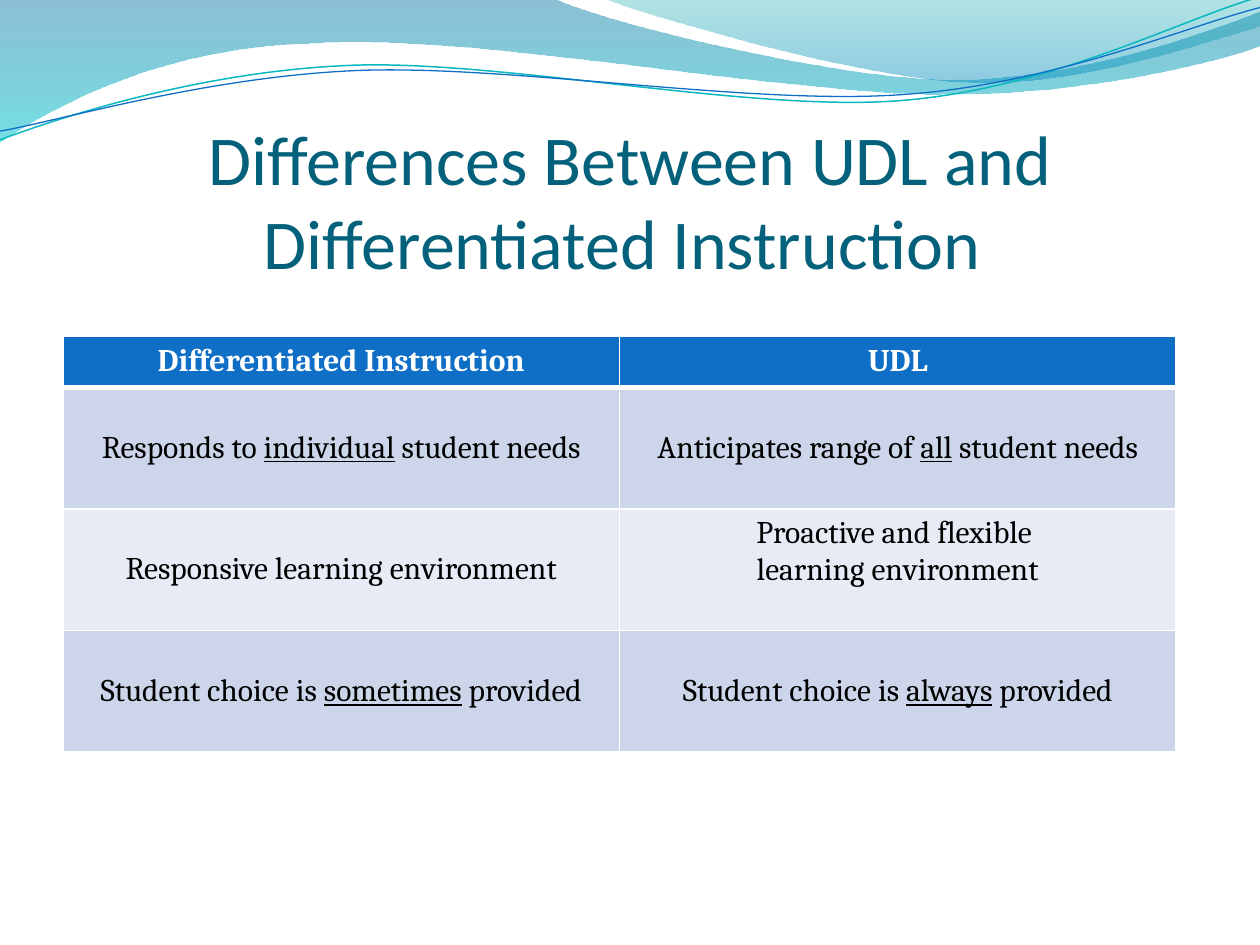
from lxml.etree import SubElement
from pptx import Presentation
from pptx.dml.color import RGBColor
from pptx.enum.text import MSO_ANCHOR as Anchor, PP_ALIGN as Align
from pptx.oxml.ns import qn
from pptx.util import Pt

WHITE = RGBColor(0xFF, 0xFF, 0xFF)
BLACK = RGBColor(0x00, 0x00, 0x00)
TITLE_TEAL = RGBColor(0x04, 0x61, 0x7B)
BLUE = RGBColor(0x0F, 0x6F, 0xC6)
TEAL = RGBColor(0x0A, 0xB8, 0xBF)
DEEP_BLUE = RGBColor(0x00, 0x74, 0xA1)
AQUA = RGBColor(0x00, 0xC6, 0xCF)
SEA_GREEN = RGBColor(0x00, 0xA1, 0xA9)
SKY_BLUE = RGBColor(0x00, 0x8B, 0xBF)
BAND_DARK = RGBColor(0xCC, 0xD5, 0xEA)
BAND_LIGHT = RGBColor(0xE7, 0xEB, 0xF5)

prs = Presentation()
prs.slide_width, prs.slide_height = Pt(720), Pt(540)
slide = prs.slides.add_slide(prs.slide_layouts[6])


def add_wave(start, segments, close):
    """Draw an outline in points; a segment is a line end or a cubic Bezier's three points."""
    builder = slide.shapes.build_freeform(Pt(start[0]), Pt(start[1]))
    builder.add_line_segments([(Pt(x), Pt(y)) for segment in segments for x, y in segment],
                              close=close)
    wave = builder.convert_to_shape()
    wave.shadow.inherit = False
    # Join each run of three line ends into one Bezier command
    line_ends = iter(list(wave.element.spPr.iter(qn("a:lnTo"))))
    for segment in segments:
        first = next(line_ends)
        if len(segment) == 3:
            bezier = SubElement(first.getparent(), qn("a:cubicBezTo"))
            first.addprevious(bezier)
            for line_end in (first, next(line_ends), next(line_ends)):
                bezier.append(line_end[0])
                line_end.getparent().remove(line_end)
    return wave


# Translucent waves: start, segments, (colour, opacity %) from top to bottom
gradient_waves = [
    ((0, 0),
     [[(316.8, -0.7)],
      [(342.7, 12.2), (478.1, 45.4), (545.8, 45.4)],
      [(614.2, 45.4), (689.8, 18.7), (720, 6.5)],
      [(720.7, 25.9)],
      [(707.8, 31.7), (626.4, 54.7), (537.1, 54)],
      [(447.8, 54), (275, 20.2), (185, 24.5)],
      [(92.9, 25.9), (33.1, 59.8), (-0.7, 81.4)]],
     [(DEEP_BLUE, 45), (AQUA, 55)]),
    ((344.9, -0.7),
     [[(366.5, 7.9), (491, 44.6), (553.7, 46.8)],
      [(616.3, 49.7), (691.9, 23), (720, 15.1)],
      [(720, 0)]],
     [(SEA_GREEN, 30), (SKY_BLUE, 45)]),
]
for start, segments, shades in gradient_waves:
    wave = add_wave(start, segments, close=True)
    wave.line.fill.background()
    wave.fill.gradient()
    wave.fill.gradient_angle = 270
    for stop, (color, _) in zip(wave.fill.gradient_stops, shades):
        stop.color.rgb = color
    for node, (_, opacity) in zip(wave.element.spPr.iter(qn("a:srgbClr")), shades):
        SubElement(node, qn("a:alpha"), val=str(opacity * 1000))

# Thin curves: start, segments, colour, width
thin_curves = [
    ((0, 79.9),
     [[(34.6, 67), (113.8, 41), (199.4, 37.4)],
      [(284.4, 33.8), (427, 64.1), (513.4, 57.6)],
      [(599.8, 51.1), (675.4, 10.8), (718.6, -1.4)]],
     TEAL, 0.85),
    ((0, 74.9),
     [[(33.8, 69.1), (118.1, 43.9), (203.8, 40.3)],
      [(290.2, 36.7), (429.8, 60.5), (516.2, 54)],
      [(601.9, 48.2), (677.5, 15.1), (720, 4.3)]],
     BLUE, 0.75),
]
for start, segments, color, width in thin_curves:
    curve = add_wave(start, segments, close=False)
    curve.fill.background()
    curve.line.color.rgb = color
    curve.line.width = Pt(width)

# Title
title = slide.shapes.add_textbox(Pt(36), Pt(72), Pt(648), Pt(90)).text_frame
title.word_wrap = True
title.vertical_anchor = Anchor.BOTTOM
title.margin_left = title.margin_right = title.margin_bottom = 0
title.text = "Differences Between UDL and Differentiated Instruction "
title.paragraphs[0].alignment = Align.CENTER
title_font = title.paragraphs[0].runs[0].font
title_font.name, title_font.size = "Calibri", Pt(40)
title_font.color.rgb = TITLE_TEAL

# Comparison table; words between asterisks are underlined
comparison = [
    ("Differentiated Instruction", "UDL"),
    ("Responds to *individual* student needs", "Anticipates range of *all* student needs"),
    ("Responsive learning environment", "Proactive and flexible \nlearning environment"),
    ("Student choice is *sometimes* provided", "Student choice is *always* provided"),
]
HEADER_HEIGHT, ROW_HEIGHT = 29.2, 69.5
table = slide.shapes.add_table(
    len(comparison), 2, Pt(36), Pt(192.2), Pt(636), Pt(HEADER_HEIGHT + 3 * ROW_HEIGHT)).table
for r, entries in enumerate(comparison):
    is_header = r == 0
    table.rows[r].height = Pt(HEADER_HEIGHT if is_header else ROW_HEIGHT)
    for c, entry in enumerate(entries):
        cell = table.cell(r, c)
        lines = entry.split("\n")
        cell.vertical_anchor = Anchor.TOP if is_header or len(lines) > 1 else Anchor.MIDDLE
        if is_header:
            rule = SubElement(cell._tc.get_or_add_tcPr(), qn("a:lnB"), w=str(Pt(3)))
            SubElement(SubElement(rule, qn("a:solidFill")), qn("a:srgbClr"), val=str(WHITE))
        cell.fill.solid()
        cell.fill.fore_color.rgb = BLUE if is_header else BAND_DARK if r % 2 else BAND_LIGHT
        cell.text_frame.text = "\n".join(line.split("*")[0] for line in lines)
        for paragraph, line in zip(cell.text_frame.paragraphs, lines):
            paragraph.alignment = Align.CENTER
            for part in line.split("*")[1:]:
                paragraph.add_run().text = part
            for i, run in enumerate(paragraph.runs):
                run.font.name, run.font.size = "Cambria", Pt(18)
                run.font.bold = is_header
                run.font.underline = i % 2 == 1
                run.font.color.rgb = WHITE if is_header else BLACK

prs.save("out.pptx")
